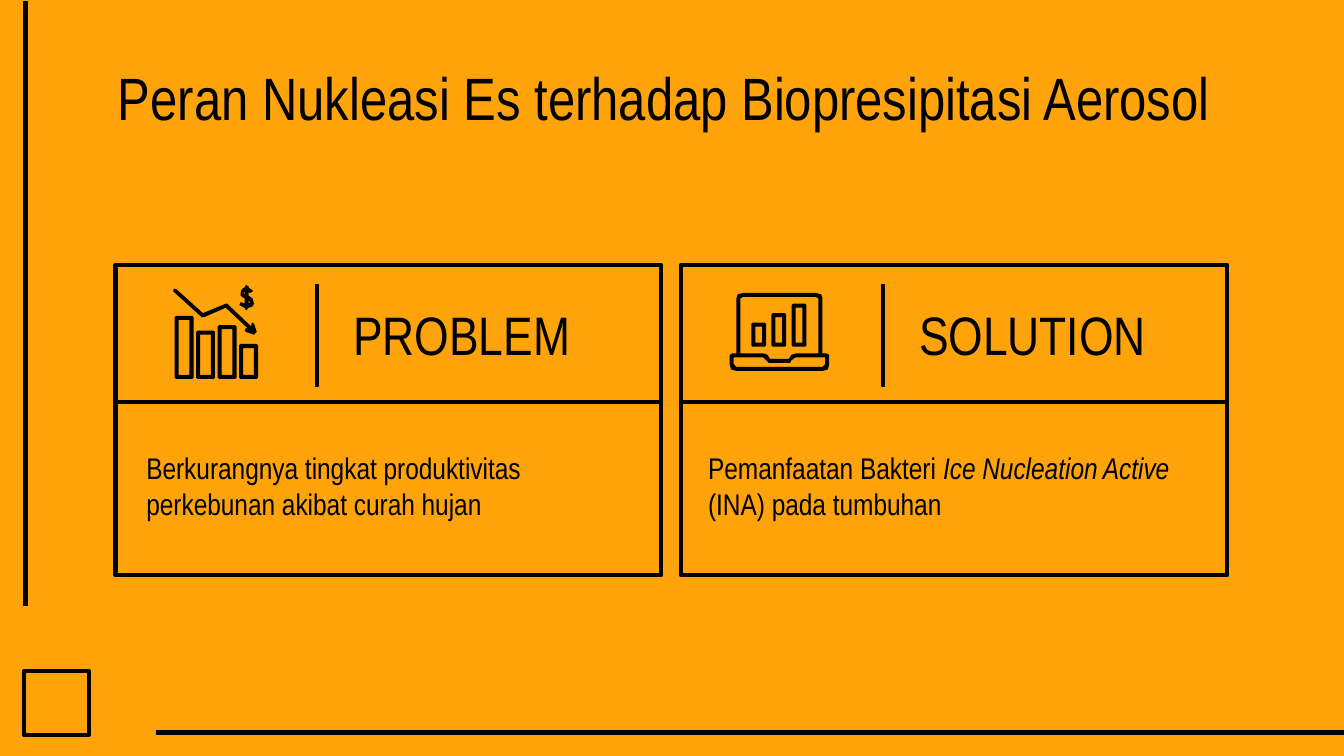
from lxml.etree import SubElement
from pptx import Presentation
from pptx.dml.color import RGBColor
from pptx.enum.shapes import MSO_CONNECTOR, MSO_SHAPE
from pptx.enum.text import MSO_ANCHOR
from pptx.oxml.ns import qn
from pptx.util import Inches, Pt

ORANGE = RGBColor(0xFE, 0xA3, 0x0A)
BLACK = RGBColor(0, 0, 0)

prs = Presentation()
prs.slide_width = Inches(10)
prs.slide_height = Inches(10) * 9 // 16
s = prs.slides.add_slide(prs.slide_layouts[6])
s.background.fill.solid()
s.background.fill.fore_color.rgb = ORANGE


def add_text(text, x, y, w, h, size=16, anchor=MSO_ANCHOR.MIDDLE, italic=""):
    tf = s.shapes.add_textbox(Inches(x), Inches(y), Inches(w), Inches(h)).text_frame
    tf.word_wrap = True
    tf.vertical_anchor = anchor
    tf.margin_left = tf.margin_right = tf.margin_top = tf.margin_bottom = Inches(0.1)
    p = tf.paragraphs[0]
    before, found, after = text.partition(italic) if italic else (text, "", "")
    for part in (before, found, after):
        if part:
            r = p.add_run()
            r.text = part
            r.font.name = "Arial Narrow"
            r.font.size = Pt(size)
            r.font.italic = part == italic
            r.font.color.rgb = BLACK


def bar_frame(x, top, w, bottom):
    right, t, c = x + w, 0.03, 0.01
    inner = [(x + t, top + t), (right - t, top + t), (right - t, bottom - t), (x + t, bottom - t)]
    outer = [(x + c, top), (x, top + c), (x, bottom - c), (x + c, bottom),
             (right - c, bottom), (right, bottom - c), (right, top + c), (right - c, top)]
    return [inner, outer]


lines = [(0.19, 4.51, 0.19, 0.01), (10, 5.45, 1.16, 5.45)]
boxes = [(0.18, 4.99, 0.48, 0.48)]
for x in (0.86, 5.07):
    boxes.append((x, 1.97, 4.06, 2.31))
    lines.append((x + 4.06, 2.99, x, 2.99))
    lines.append((x + 1.5, 2.11, x + 1.5, 2.88))

for x, y, w, h in boxes:
    box = s.shapes.add_shape(MSO_SHAPE.RECTANGLE, Inches(x), Inches(y), Inches(w), Inches(h))
    box.shadow.inherit = False
    box.fill.background()
    box.line.color.rgb = BLACK
    box.line.width = Pt(2.25)
    SubElement(box._element.spPr.find(qn("a:ln")), qn("a:round"))

for x1, y1, x2, y2 in lines:
    c = s.shapes.add_connector(MSO_CONNECTOR.STRAIGHT, Inches(x1), Inches(y1), Inches(x2), Inches(y2))
    c.line.color.rgb = BLACK
    c.line.width = Pt(2.25)
    SubElement(c._element.spPr, qn("a:effectLst"))

add_text("Peran Nukleasi Es terhadap Biopresipitasi Aerosol", 0.78, 0.35, 8.44, 1.54,
         size=32, anchor=MSO_ANCHOR.TOP)
add_text("Berkurangnya tingkat produktivitas perkebunan akibat curah hujan", 0.99, 3.17, 3.85, 0.89)
add_text("Pemanfaatan Bakteri Ice Nucleation Active (INA) pada tumbuhan", 5.17, 3.17, 3.85, 0.89,
         italic="Ice Nucleation Active")
add_text("PROBLEM", 2.53, 2.29, 2.4, 0.39, size=29)
add_text("SOLUTION", 6.74, 2.29, 2.4, 0.39, size=29)

laptop = [
    [(6.07, 2.21), (6.09, 2.22), (6.09, 2.63), (5.92, 2.63), (5.89, 2.64), (5.87, 2.67),
     (5.73, 2.67), (5.71, 2.64), (5.68, 2.63), (5.51, 2.63), (5.51, 2.22), (5.53, 2.21)],
    [(6.14, 2.66), (6.14, 2.71), (6.12, 2.73), (5.48, 2.73), (5.46, 2.71), (5.46, 2.66),
     (5.68, 2.66), (5.7, 2.68), (5.72, 2.7), (5.88, 2.7), (5.89, 2.68), (5.92, 2.66)],
    [(5.53, 2.18), (5.49, 2.19), (5.48, 2.22), (5.48, 2.63), (5.45, 2.63), (5.43, 2.64),
     (5.43, 2.71), (5.44, 2.75), (5.48, 2.76), (6.12, 2.76), (6.16, 2.75), (6.17, 2.71),
     (6.17, 2.64), (6.15, 2.63), (6.12, 2.63), (6.12, 2.22), (6.11, 2.19), (6.07, 2.18)],
]
dollar = [
    [(1.82, 2.17), (1.82, 2.19), (1.81, 2.18)],
    [(1.85, 2.23), (1.86, 2.25), (1.85, 2.26)],
    [(1.83, 2.12), (1.82, 2.14), (1.8, 2.15), (1.79, 2.18), (1.79, 2.2), (1.82, 2.22),
     (1.82, 2.26), (1.8, 2.25), (1.79, 2.25), (1.78, 2.27), (1.82, 2.29), (1.83, 2.31),
     (1.85, 2.29), (1.88, 2.28), (1.89, 2.26), (1.88, 2.22), (1.85, 2.2), (1.85, 2.17),
     (1.86, 2.18), (1.88, 2.17), (1.88, 2.16), (1.85, 2.14), (1.85, 2.13)],
]
trend = [
    [(1.3, 2.15), (1.29, 2.15), (1.29, 2.17), (1.5, 2.36), (1.52, 2.36), (1.68, 2.29),
     (1.85, 2.45), (1.83, 2.44), (1.82, 2.46), (1.83, 2.47), (1.89, 2.49), (1.9, 2.48),
     (1.91, 2.47), (1.89, 2.41), (1.88, 2.4), (1.87, 2.41), (1.87, 2.43), (1.69, 2.26),
     (1.68, 2.26), (1.51, 2.33), (1.31, 2.15)],
]
rising = [bar_frame(5.59 + 0.15 * i, top, 0.11, 2.58) for i, top in enumerate((2.4, 2.33, 2.26))]
falling = [bar_frame(1.3 + 0.16 * i, top, 0.14, 2.82)
           for i, top in enumerate((2.35, 2.46, 2.42, 2.56))]

for icon in ([laptop] + rising, [dollar] + falling + [trend]):
    group = s.shapes.add_group_shape()
    for contours in icon:
        start = contours[0][0]
        fb = group.shapes.build_freeform(Inches(start[0]), Inches(start[1]))
        for i, contour in enumerate(contours):
            points = [(Inches(x), Inches(y)) for x, y in contour]
            if i:
                fb.move_to(*points[0])
            fb.add_line_segments(points[1:], close=True)
        shape = fb.convert_to_shape()
        shape.shadow.inherit = False
        shape.fill.solid()
        shape.fill.fore_color.rgb = BLACK
        shape.line.fill.background()

prs.save("out.pptx")
